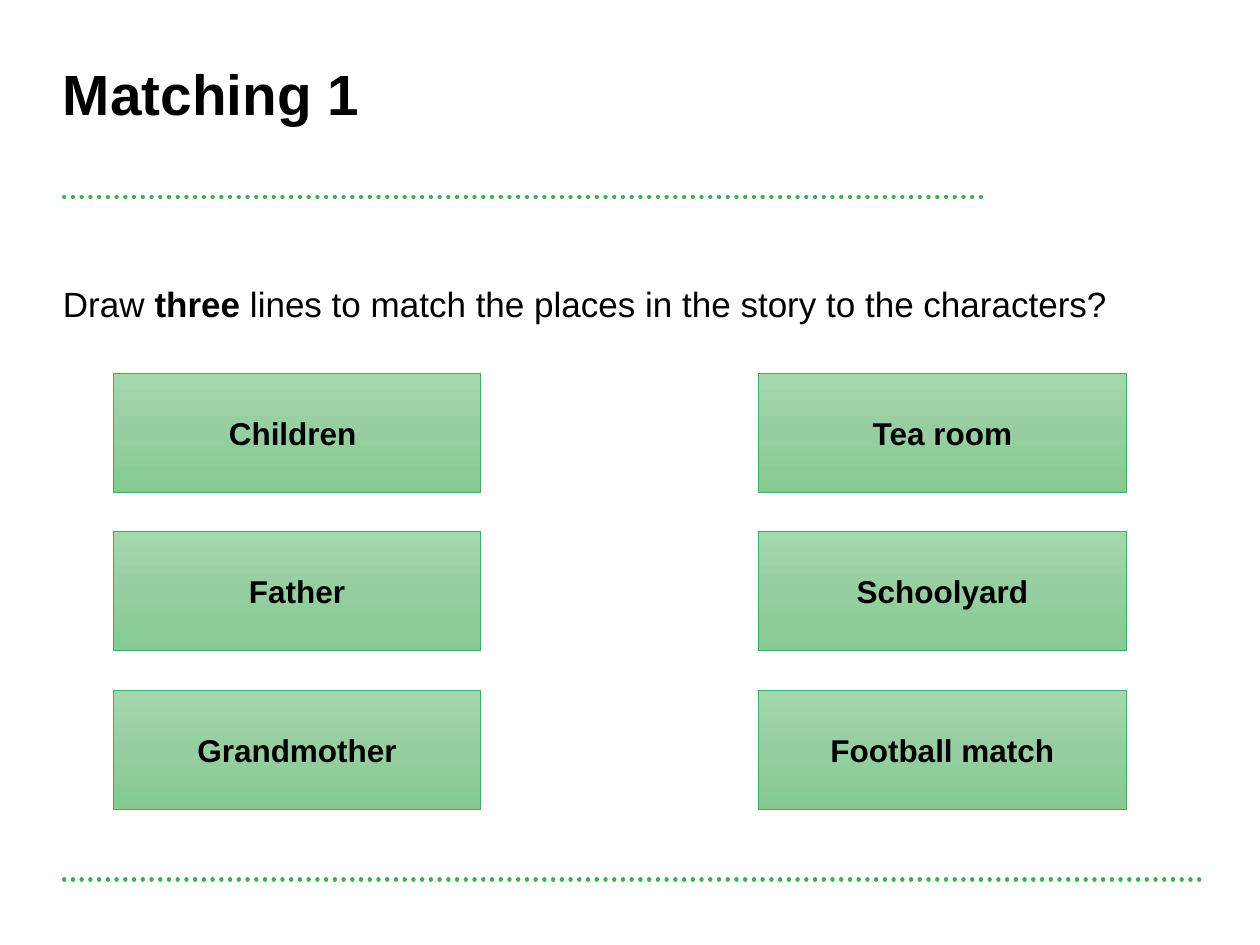
from copy import deepcopy

from pptx import Presentation
from pptx import util as u
from pptx.dml.color import RGBColor
from pptx.enum import dml, shapes, text
from pptx.oxml.ns import qn
from pptx.oxml.xmlchemy import OxmlElement

COLORS = {
    "text": "000000",
    "green": "3EAD5C",
    "box_top": "A4D7AD",
    "box_middle": "97CEA1",
    "box_bottom": "84CA91",
}


def color(name):
    return RGBColor.from_string(COLORS[name])


def add_run(paragraph, words, size, bold):
    run = paragraph.add_run()
    run.text = words
    run.font.name = "Arial"
    run.font.size = u.Pt(size)
    run.font.bold = bold
    run.font.color.rgb = color("text")


presentation = Presentation()
presentation.slide_width = u.Pt(720)
presentation.slide_height = u.Pt(540)
slide = presentation.slides.add_slide(presentation.slide_layouts[6])

# Dotted rules below the title and at the foot
for right, top in [(686, 502.5), (561.5, 112.5)]:
    rule = slide.shapes.add_connector(
        shapes.MSO_CONNECTOR.STRAIGHT, u.Pt(36.7), u.Pt(top), u.Pt(right), u.Pt(top))
    rule.line.color.rgb = color("green")
    rule.line.width = u.Pt(2.5)
    rule.line.dash_style = dml.MSO_LINE.ROUND_DOT
    properties = rule._element.spPr
    properties.find(qn("a:ln")).set("cap", "rnd")
    properties.append(OxmlElement("a:effectLst"))

# Title and instruction: top, height, line spacing, size, runs
TEXTS = [
    (37.4, 67, 35, 32.4, [("Matching 1", True)]),
    (162.7, 350, 23, 20, [
        ("Draw ", False),
        ("three", True),
        (" lines to match the places in the story to the characters?", False),
    ]),
]
for top, height, spacing, size, runs in TEXTS:
    box = slide.shapes.add_textbox(u.Pt(36), u.Pt(top), u.Pt(648), u.Pt(height))
    frame = box.text_frame
    frame.word_wrap = True
    frame.margin_left = frame.margin_right = 0
    frame.margin_top = frame.margin_bottom = 0
    paragraph = frame.paragraphs[0]
    paragraph.line_spacing = u.Pt(spacing)
    for words, bold in runs:
        add_run(paragraph, words, size, bold)

# Matching boxes: characters on the left, places on the right
COLUMNS = [
    (64.8, ["Children ", "Father", "Grandmother"]),
    (433.6, ["Tea room", "Schoolyard", "Football match"]),
]
GRADIENT = [(0, "box_top"), (0.5, "box_middle"), (1, "box_bottom")]
for left, labels in COLUMNS:
    for row, label in enumerate(labels):
        box = slide.shapes.add_shape(
            shapes.MSO_SHAPE.RECTANGLE,
            u.Pt(left), u.Pt(213.3 + row * 90.6), u.Pt(209.9), u.Pt(68))
        box.shadow.inherit = False
        box.line.color.rgb = color("green")
        box.line.width = u.Pt(0.5)

        box.fill.gradient()
        box.fill.gradient_angle = 270
        stop_list = box._element.spPr.find(qn("a:gradFill")).find(qn("a:gsLst"))
        stop_list.insert(1, deepcopy(stop_list[0]))
        for stop, (position, name) in zip(box.fill.gradient_stops, GRADIENT):
            stop.position = position
            stop.color.rgb = color(name)

        frame = box.text_frame
        frame.word_wrap = True
        frame.vertical_anchor = text.MSO_ANCHOR.MIDDLE
        paragraph = frame.paragraphs[0]
        paragraph.alignment = text.PP_ALIGN.CENTER
        add_run(paragraph, label, 18, True)

presentation.save("out.pptx")
